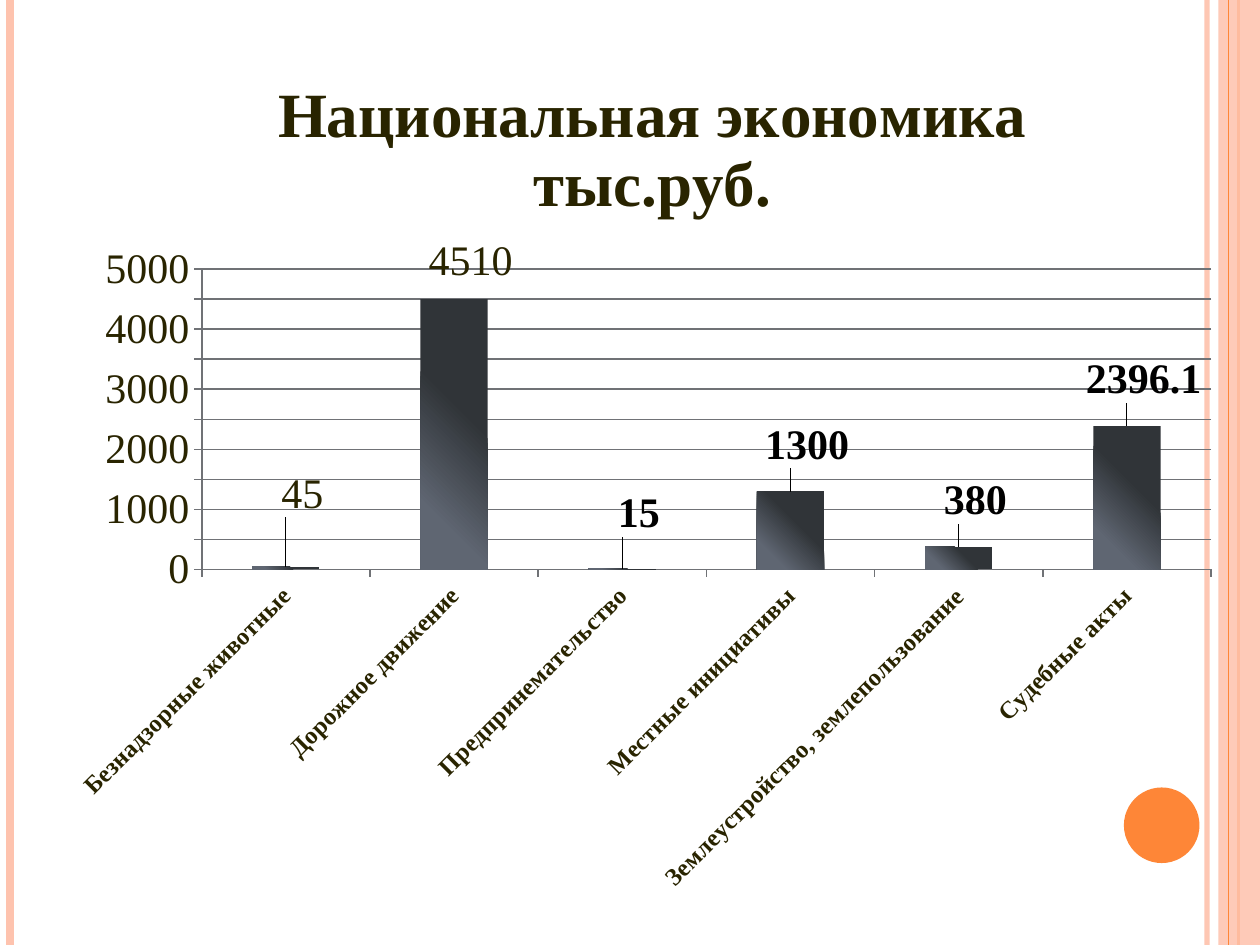
from lxml.etree import SubElement
from pptx import Presentation
from pptx.chart.data import CategoryChartData
from pptx.dml.color import RGBColor
from pptx.enum.chart import XL_CHART_TYPE, XL_LABEL_POSITION, XL_TICK_MARK
from pptx.enum.shapes import MSO_CONNECTOR, MSO_SHAPE
from pptx.oxml import parse_xml
from pptx.oxml.ns import nsdecls, qn
from pptx.util import Inches, Pt


def paint(color, code):
    color.rgb = RGBColor.from_string(code)


def fade(color, alpha):
    """Set the opacity of a solid fill or line, in percent."""
    for node in color.iter(qn("a:srgbClr")):
        SubElement(node, qn("a:alpha"), val=str(alpha * 1000))


def style(font, size, code, bold=False, face="Times New Roman"):
    font.size, font.bold, font.name = Pt(size), bold, face
    paint(font.color, code)


def write(frame, text, **look):
    frame.text = text
    style(frame.paragraphs[0].runs[0].font, **look)


def layout(x, y, w=None, h=None):
    """Make a manual layout in fractions of the chart."""
    parts = [("xMode", "edge"), ("yMode", "edge")] if w or y > 0 else []
    if w:
        parts.insert(0, ("layoutTarget", "inner"))
    parts += [("x", x), ("y", y)]
    if w:
        parts += [("w", w), ("h", h)]
    body = "".join(f'<c:{tag} val="{val}"/>' for tag, val in parts)
    return parse_xml(f'<c:layout {nsdecls("c")}><c:manualLayout>{body}'
                     "</c:manualLayout></c:layout>")


def place(node, after, box):
    """Put a layout right after the named child, or first if none."""
    for old in node.findall(qn("c:layout")):
        node.remove(old)
    if after:
        node.find(qn(after)).addnext(box)
    else:
        node.insert(0, box)


class Deck:
    ink, peach, orange = "292400", "FEC3AE", "FE8637"
    grey, dark, light = "707276", "303438", "5F6672"

    def __init__(self):
        self.show = Presentation()
        self.show.slide_width, self.show.slide_height = Inches(10), Inches(7.5)
        self.slide = self.show.slides.add_slide(self.show.slide_layouts[6])

    def stripe(self, x, code, width, alpha=100):
        line = self.slide.shapes.add_connector(
            MSO_CONNECTOR.STRAIGHT, Inches(x), 0, Inches(x), Inches(7.5))
        line.line.width = Pt(width)
        paint(line.line.color, code)
        props = line._element.spPr
        if alpha < 100:
            fade(props, alpha)
        SubElement(props, qn("a:effectLst"))

    def shape(self, kind, x, y, w, h, code, alpha=100):
        form = self.slide.shapes.add_shape(
            kind, Inches(x), Inches(y), Inches(w), Inches(h))
        form.shadow.inherit = False
        form.fill.solid()
        paint(form.fill.fore_color, code)
        form.line.fill.background()
        if alpha < 100:
            fade(form._element.spPr, alpha)

    def chart(self, x, y, w, h, title, rows):
        data = CategoryChartData()
        data.categories = [row[0] for row in rows]
        data.add_series(title, [row[1] for row in rows])
        chart = self.slide.shapes.add_chart(
            XL_CHART_TYPE.COLUMN_CLUSTERED, Inches(x), Inches(y),
            Inches(w), Inches(h), data).chart
        style(chart.font, 18, "000000", face="Cambria")
        chart.has_legend = False
        chart.has_title = True
        write(chart.chart_title.text_frame, title,
              size=36, code=self.ink, bold=True)
        chart.chart_title.include_in_layout = False
        place(chart.chart_title._element, "c:tx", layout(0.18, 0.04))
        place(chart.plots[0]._element.getparent(), None,
              layout(0.125, 0.275, 0.855, 0.34))
        self.axes(chart)
        self.bars(chart.plots[0], rows)

    def axes(self, chart):
        for axis in (chart.category_axis, chart.value_axis):
            axis.major_tick_mark = XL_TICK_MARK.OUTSIDE
            axis.format.line.width = Pt(1)
            paint(axis.format.line.color, self.grey)
        cat, val = chart.category_axis, chart.value_axis
        style(cat.tick_labels.font, 14, self.ink, bold=True)
        cat._element.find(qn("c:txPr")).find(qn("a:bodyPr")).set(
            "rot", "-2700000")
        style(val.tick_labels.font, 24, self.ink)
        val.minimum_scale, val.maximum_scale, val.major_unit = 0, 5000, 500
        val.has_major_gridlines = True
        val.major_gridlines.format.line.width = Pt(1)
        paint(val.major_gridlines.format.line.color, self.grey)

    def bars(self, plot, rows):
        plot.gap_width, plot.vary_by_categories = 150, False
        series = plot.series[0]
        # Radial gradient from the lower left corner
        fill = series.format.fill
        fill.gradient()
        for stop, code in zip(fill.gradient_stops, (self.light, self.dark)):
            paint(stop.color, code)
        fill.gradient_stops[0].position = 0.2
        fill.gradient_stops[1].position = 0.6
        grad = series._element.spPr.find(qn("a:gradFill"))
        grad.replace(grad.find(qn("a:lin")), parse_xml(
            f'<a:path {nsdecls("a")} path="circle">'
            '<a:fillToRect t="100000" r="100000"/></a:path>'))
        # Value labels, each shifted from its bar
        labels = series.data_labels
        labels.show_value = True
        style(labels.font, 24, "000000", bold=True)
        for i, (name, value, rise, bold) in enumerate(rows):
            label = series.points[i].data_label
            style(label.font, 24, "000000" if bold else self.ink, bold)
            label.position = XL_LABEL_POSITION.OUTSIDE_END
        for node, row in zip(labels._element.findall(qn("c:dLbl")), rows):
            place(node, "c:idx", layout(0.014, -row[2]))


def main():
    deck = Deck()
    # Side stripes and the round marker
    deck.stripe(9.58, deck.peach, 3, 93)
    deck.stripe(0.08, deck.peach, 4.5)
    deck.stripe(9.83, deck.orange, 1.5)
    deck.shape(MSO_SHAPE.RECTANGLE, 9.67, 0, 0.33, 7.5, deck.peach, 87)
    deck.stripe(9.75, deck.orange, 0.75)
    deck.shape(MSO_SHAPE.OVAL, 8.92, 6.25, 0.6, 0.6, deck.orange)
    # Category, value, label rise, bold label
    rows = [
        ("Безнадзорные животные", 45, 0.05, False),
        ("Дорожное движение", 4510, 0.01, False),
        ("Предпринемательство", 15, 0.03, True),
        ("Местные инициативы", 1300, 0.02, True),
        ("Землеустройство, землепользование", 380, 0.02, True),
        ("Судебные акты", 2396.1, 0.02, True),
    ]
    deck.chart(0.43, 0.21, 9.37, 7.01,
               "Национальная экономика тыс.руб.", rows)
    deck.show.save("out.pptx")


if __name__ == "__main__":
    main()
